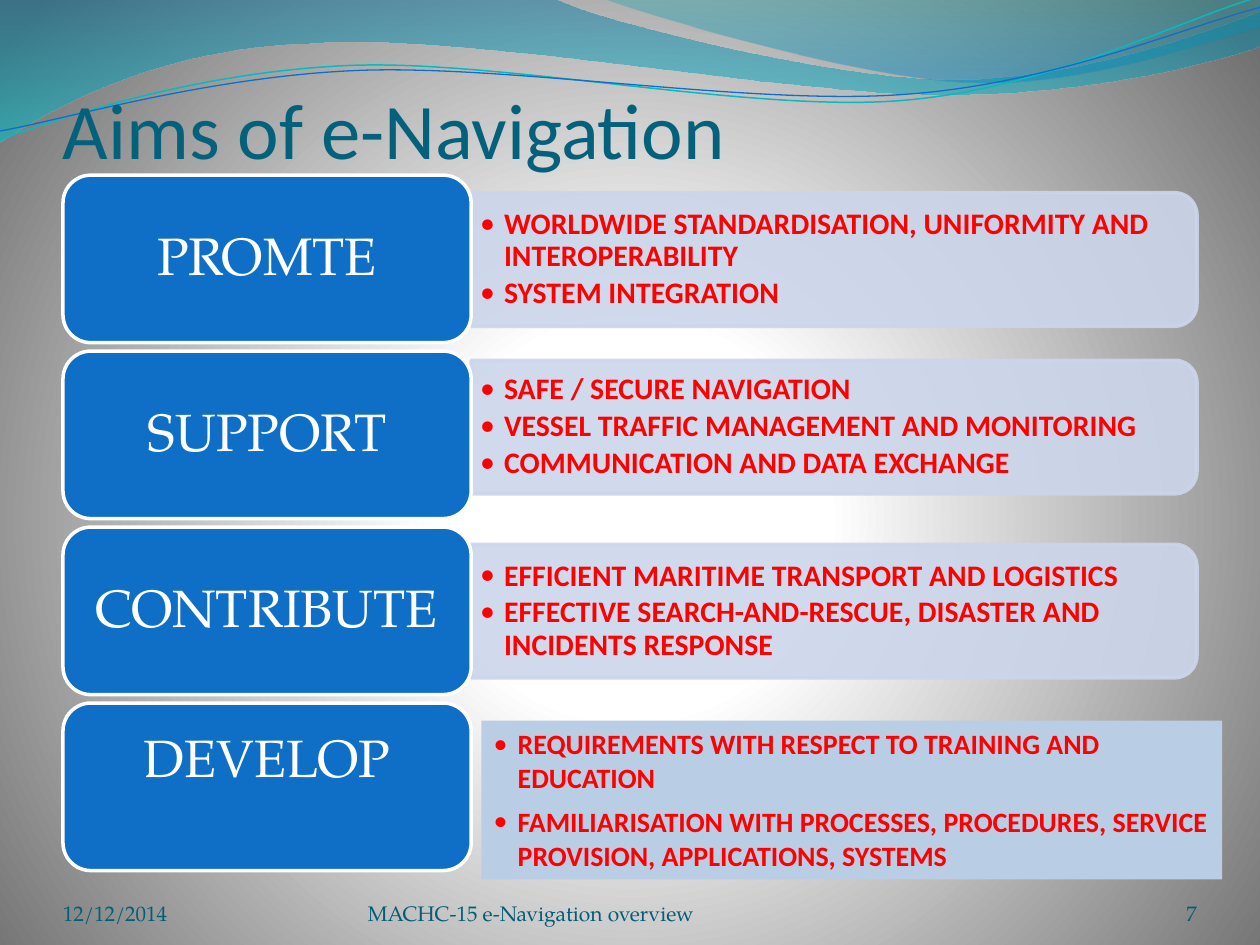
from dataclasses import dataclass
from math import cos, radians, sin

from lxml.etree import SubElement
from pptx import Presentation
from pptx.dml.color import RGBColor
from pptx.enum.shapes import MSO_SHAPE
from pptx.enum.text import MSO_ANCHOR, MSO_AUTO_SIZE, PP_ALIGN
from pptx.oxml.ns import qn
from pptx.util import Inches, Pt


@dataclass(frozen=True)
class Theme:
    heading_font: str = "Calibri"
    body_font: str = "TeX Gyre Pagella"
    title: str = "04617B"
    footer: str = "045D75"
    card: str = "0F6FC6"
    panel: str = "CCD5EA"
    develop_panel: str = "B9CDE5"
    point: str = "FF0000"
    white: str = "FFFFFF"
    teal_line: str = "0AB8BF"
    title_size: int = 45
    card_size: int = 30
    point_size: int = 17
    develop_size: int = 16
    footer_size: int = 12


@dataclass(frozen=True)
class Stop:
    percent: int
    color: str
    opacity: int = 100


@dataclass(frozen=True)
class Aim:
    label: str
    panel_middle: float
    points: tuple[str, ...]


@dataclass(frozen=True)
class Footer:
    text: str
    left: float
    width: float
    align: PP_ALIGN = PP_ALIGN.LEFT


THEME = Theme()
CARD_LEFT, CARD_TOP, CARD_WIDTH, CARD_HEIGHT = 0.5, 1.39, 3.24, 1.33
CARD_PITCH = (5.58 - CARD_TOP) / 3
PANEL_LENGTH, PANEL_DEPTH = 5.76, 1.06
INDENT = 0.19
CURVE_TILT = 357.3

AIMS = (
    Aim("PROMTE", 2.06, ("WORLDWIDE STANDARDISATION, UNIFORMITY AND INTEROPERABILITY",
                         "SYSTEM INTEGRATION")),
    Aim("SUPPORT", 3.39, ("SAFE / SECURE NAVIGATION",
                          "VESSEL TRAFFIC MANAGEMENT AND MONITORING",
                          "COMMUNICATION AND DATA EXCHANGE")),
    Aim("CONTRIBUTE", 4.85, ("EFFICIENT MARITIME TRANSPORT AND LOGISTICS",
                             "EFFECTIVE SEARCH-AND-RESCUE, DISASTER AND INCIDENTS RESPONSE")),
)
DEVELOP_POINTS = (
    "REQUIREMENTS WITH RESPECT TO TRAINING AND EDUCATION",
    "FAMILIARISATION WITH PROCESSES, PROCEDURES, SERVICE PROVISION, APPLICATIONS, SYSTEMS",
)
FOOTERS = (
    Footer("12/12/2014", 0.5, 2.33),
    Footer("MACHC-15 e-Navigation overview", 2.92, 3.67),
    Footer("7", 8.67, 0.83, PP_ALIGN.RIGHT),
)

# Each wave step holds one point (straight) or three (Bezier curve)
BROAD_WAVE = [(0, 0), (4.4, -0.01), (4.76, 0.17, 6.64, 0.63, 7.58, 0.63),
              (8.53, 0.63, 9.58, 0.26, 10, 0.09), (10.01, 0.36),
              (9.83, 0.44, 8.7, 0.76, 7.46, 0.75), (6.22, 0.75, 3.82, 0.28, 2.57, 0.34),
              (1.29, 0.36, 0.46, 0.83, -0.01, 1.13)]
RIGHT_WAVE = [(4.79, -0.01), (5.09, 0.11, 6.82, 0.62, 7.69, 0.65),
              (8.56, 0.69, 9.61, 0.32, 10, 0.21), (10, 0)]
TEAL_CURVE = [(0, 1.11), (0.48, 0.93, 1.58, 0.57, 2.77, 0.52),
              (3.95, 0.47, 5.93, 0.89, 7.13, 0.8), (8.33, 0.71, 9.38, 0.15, 9.98, -0.02)]
BLUE_CURVE = [(0, 1.04), (0.47, 0.96, 1.64, 0.61, 2.83, 0.56),
              (4.03, 0.51, 5.97, 0.84, 7.17, 0.75), (8.36, 0.67, 9.41, 0.21, 10, 0.06)]


def rgb(color: str) -> RGBColor:
    return RGBColor.from_string(color)


def set_stops(gradient, *stops: Stop) -> None:
    """Empty a gradient element and give it new colour stops."""
    for child in list(gradient):
        gradient.remove(child)
    stop_list = SubElement(gradient, qn("a:gsLst"))
    for stop in stops:
        entry = SubElement(stop_list, qn("a:gs"), pos=str(stop.percent * 1000))
        color = SubElement(entry, qn("a:srgbClr"), val=stop.color)
        if stop.opacity < 100:
            SubElement(color, qn("a:alpha"), val=str(stop.opacity * 1000))


def draw_background(slide) -> None:
    slide.background.fill.gradient()
    gradient = next(slide.element.iter(qn("a:gradFill")))
    set_stops(gradient, Stop(0, "FFFFFF"), Stop(25, "FFFFFF"), Stop(100, "707070"))
    circle = SubElement(gradient, qn("a:path"), path="circle")
    SubElement(circle, qn("a:fillToRect"), l="10000", t="110000", r="10000", b="100000")


def draw_outline(slide, steps: list[tuple], close: bool, tilt: float = 0):
    """Draw steps as straight and Bezier segments, level before the tilt is applied."""
    points = [pair for step in steps for pair in zip(step[::2], step[1::2])]
    middle_x = (points[0][0] + points[-1][0]) / 2
    middle_y = (points[0][1] + points[-1][1]) / 2
    across, down = cos(radians(-tilt)), sin(radians(-tilt))
    start, *rest = [(Inches(middle_x + (x - middle_x) * across - (y - middle_y) * down),
                     Inches(middle_y + (x - middle_x) * down + (y - middle_y) * across))
                    for x, y in points]
    builder = slide.shapes.build_freeform(*start)
    builder.add_line_segments(rest, close=close)
    outline = builder.convert_to_shape()
    outline.shadow.inherit = False
    outline.rotation = tilt

    # Join each run of three points into one Bezier segment
    segments = iter(list(outline.element.iter(qn("a:lnTo"))))
    for step in steps[1:]:
        first, *others = [next(segments) for _ in step[::2]]
        if others:
            first.tag = qn("a:cubicBezTo")
        for segment in others:
            first.append(segment[0])
            segment.getparent().remove(segment)
    return outline


def draw_wave(slide, steps: list[tuple], *stops: Stop) -> None:
    wave = draw_outline(slide, steps, True)
    wave.line.fill.background()
    wave.fill.gradient()
    gradient = next(wave.element.iter(qn("a:gradFill")))
    set_stops(gradient, *stops)
    SubElement(gradient, qn("a:lin"), ang="5400000", scaled="1")


def draw_curve(slide, steps: list[tuple], color: str, width: float) -> None:
    curve = draw_outline(slide, steps, False, CURVE_TILT)
    curve.fill.background()
    curve.line.color.rgb = rgb(color)
    curve.line.width = Pt(width)


def draw_block(slide, kind, box: tuple, fill: str, line: str | None = None):
    block = slide.shapes.add_shape(kind, *map(Inches, box))
    block.shadow.inherit = False
    block.fill.solid()
    block.fill.fore_color.rgb = rgb(fill)
    if line:
        block.line.color.rgb = rgb(line)
        block.line.width = Pt(2)
    else:
        block.line.fill.background()
    return block


def set_frame(shape, anchor, insets: tuple):
    frame = shape.text_frame
    frame.word_wrap = True
    frame.vertical_anchor = anchor
    (frame.margin_left, frame.margin_top,
     frame.margin_right, frame.margin_bottom) = map(Inches, insets)
    return frame


def style(paragraph, font: str, size: int, color: str, align=PP_ALIGN.LEFT, bold=False) -> None:
    paragraph.alignment = align
    paragraph.font.name = font
    paragraph.font.size = Pt(size)
    paragraph.font.bold = bold
    paragraph.font.color.rgb = rgb(color)


def write_line(slide, text: str, box: tuple, insets: tuple, *look) -> None:
    line = slide.shapes.add_textbox(*map(Inches, box))
    paragraph = set_frame(line, MSO_ANCHOR.BOTTOM, insets).paragraphs[0]
    paragraph.text = text
    style(paragraph, *look)


def write_points(frame, points: tuple[str, ...], size: int):
    frame.text = "\n".join(points)
    for paragraph in frame.paragraphs:
        properties = paragraph._p.get_or_add_pPr()
        properties.set("marL", str(Inches(INDENT)))
        properties.set("indent", str(-Inches(INDENT)))
        SubElement(properties, qn("a:buFont"), typeface=THEME.heading_font)
        SubElement(properties, qn("a:buChar"), char="•")
        style(paragraph, THEME.heading_font, size, THEME.point, bold=True)
    return frame.paragraphs


def draw_card(slide, row: int, label: str, bottom_inset: float = 0.12) -> None:
    box = (CARD_LEFT, CARD_TOP + row * CARD_PITCH, CARD_WIDTH, CARD_HEIGHT)
    card = draw_block(slide, MSO_SHAPE.ROUNDED_RECTANGLE, box, THEME.card, THEME.white)
    frame = set_frame(card, MSO_ANCHOR.MIDDLE, (0.18, 0.12, 0.18, bottom_inset))
    frame.text = label
    style(frame.paragraphs[0], THEME.body_font, THEME.card_size, THEME.white, PP_ALIGN.CENTER)
    frame.paragraphs[0].line_spacing = 0.9


def draw_panel(slide, aim: Aim) -> None:
    left = CARD_LEFT + CARD_WIDTH
    box = (left + (PANEL_LENGTH - PANEL_DEPTH) / 2, aim.panel_middle - PANEL_LENGTH / 2,
           PANEL_DEPTH, PANEL_LENGTH)
    panel = draw_block(slide, MSO_SHAPE.ROUND_2_SAME_RECTANGLE, box, THEME.panel, THEME.panel)
    panel.rotation = 90
    for color in panel.element.spPr.iter(qn("a:srgbClr")):
        SubElement(color, qn("a:alpha"), val="90000")
    text_box = (left, aim.panel_middle - 0.48, PANEL_LENGTH - 0.05, 0.96)
    points = slide.shapes.add_textbox(*map(Inches, text_box))
    frame = set_frame(points, MSO_ANCHOR.MIDDLE, (0.07, 0.04, 0.07, 0.04))
    for paragraph in write_points(frame, aim.points, THEME.point_size):
        paragraph.line_spacing = 0.9
        paragraph.space_after = Pt(2.6)


def main() -> None:
    deck = Presentation()
    deck.slide_width, deck.slide_height = Inches(10), Inches(7.5)
    slide = deck.slides.add_slide(deck.slide_layouts[6])

    # Backdrop and waves
    draw_background(slide)
    draw_wave(slide, BROAD_WAVE, Stop(0, "0074A1", 45), Stop(100, "00C6CF", 55))
    draw_wave(slide, RIGHT_WAVE, Stop(0, "00A1A9", 30), Stop(80, "008BBF", 45))
    draw_curve(slide, TEAL_CURVE, THEME.teal_line, 0.85)
    draw_curve(slide, BLUE_CURVE, THEME.card, 0.75)

    # Title
    write_line(slide, "Aims of e-Navigation", (0.5, 0.77, 9, 0.62), (0, 0.05, 0, 0),
               THEME.heading_font, THEME.title_size, THEME.title)

    # Aims with their points
    for row, aim in enumerate(AIMS):
        draw_panel(slide, aim)
        draw_card(slide, row, aim.label)

    # Last aim: raised label and a plain panel
    draw_card(slide, len(AIMS), "DEVELOP", bottom_inset=0.53)
    develop = draw_block(slide, MSO_SHAPE.RECTANGLE, (3.82, 5.72, 5.88, 1.26),
                         THEME.develop_panel)
    frame = set_frame(develop, MSO_ANCHOR.TOP, (0.1, 0.05, 0.1, 0.05))
    frame.auto_size = MSO_AUTO_SIZE.SHAPE_TO_FIT_TEXT
    for paragraph in write_points(frame, DEVELOP_POINTS, THEME.develop_size)[1:]:
        paragraph.space_before = Pt(6)

    # Footer
    for footer in FOOTERS:
        write_line(slide, footer.text, (footer.left, 6.95, footer.width, 0.4), (0, 0, 0, 0),
                   THEME.body_font, THEME.footer_size, THEME.footer, footer.align)

    deck.save("out.pptx")


if __name__ == "__main__":
    main()
